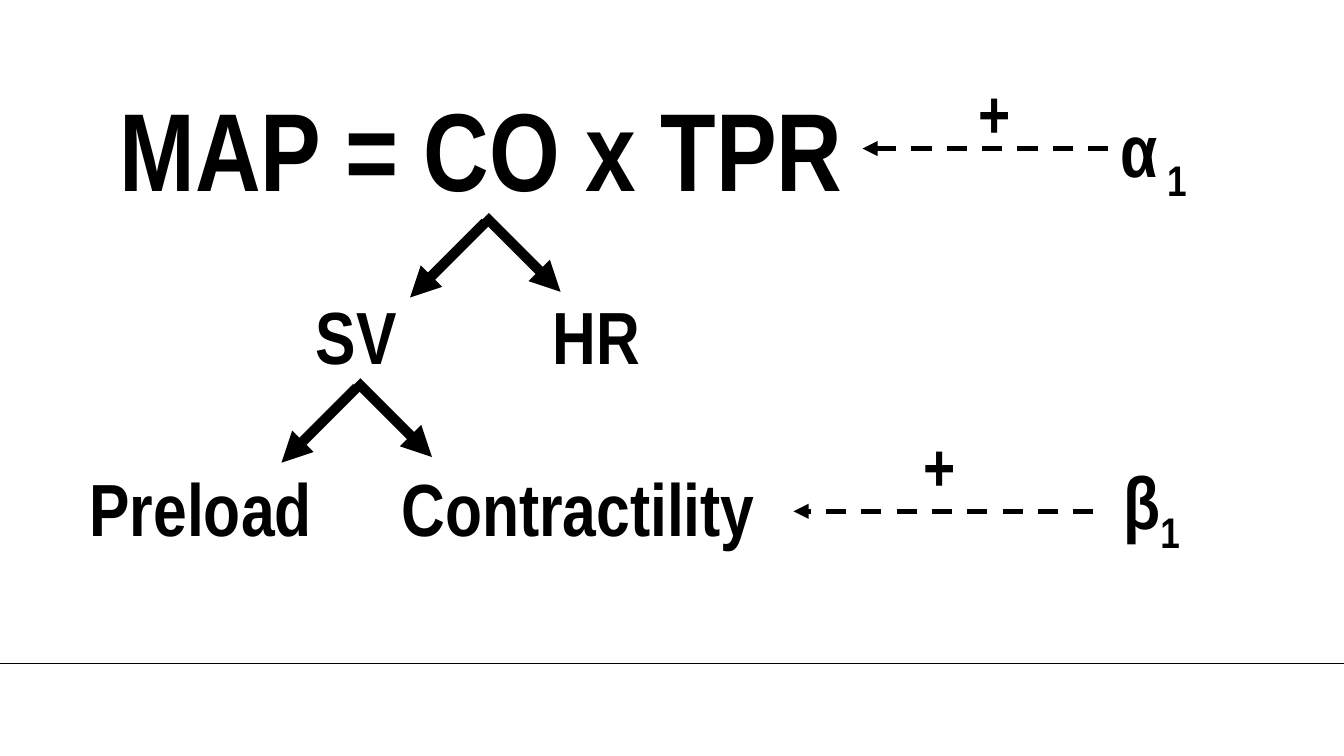
from dataclasses import dataclass

from lxml.etree import SubElement
from pptx import Presentation
from pptx.dml.color import RGBColor
from pptx.enum.dml import MSO_LINE_DASH_STYLE as Dash
from pptx.enum.shapes import MSO_CONNECTOR_TYPE as ConnectorType
from pptx.enum.text import MSO_AUTO_SIZE as AutoSize
from pptx.oxml.ns import qn
from pptx.slide import Slide
from pptx.util import Cm, Pt

PAGE_WIDTH, PAGE_HEIGHT = 28.22, 15.88
FONT = "Arial Narrow"
BLACK = "000000"
HEIGHTS = {66: 3.07, 44: 2.13, 40: 1.96}  # box height in cm for each text size
ARM = 1.58  # horizontal and vertical reach of a fork arm
APEX_LIFT = 0.12  # the right arm starts slightly above the left one


@dataclass
class Label:
    text: str
    left: float
    top: float
    width: float
    size: int = 44
    subscript: str = ""


@dataclass
class Line:
    start: tuple[float, float]
    end: tuple[float, float]
    weight: float
    arrow: bool = True
    dashed: bool = False


def color(value: str) -> RGBColor:
    return RGBColor.from_string(value)


def draw_label(page: Slide, label: Label) -> None:
    box = page.shapes.add_textbox(Cm(label.left), Cm(label.top),
                                  Cm(label.width), Cm(HEIGHTS[label.size]))
    frame = box.text_frame
    frame.text = label.text
    frame.word_wrap = False
    frame.auto_size = AutoSize.SHAPE_TO_FIT_TEXT
    para = frame.paragraphs[0]
    if label.subscript:
        span = para.add_run()
        span.text = label.subscript
        span.font._element.set("baseline", "-25000")
    for span in para.runs:
        span.font.name = FONT
        span.font.size = Pt(label.size)
        span.font.bold = True
        span.font.color.rgb = color(BLACK)


def draw_line(page: Slide, line: Line) -> None:
    connector = page.shapes.add_connector(
        ConnectorType.STRAIGHT, *map(Cm, line.start + line.end))
    connector.line.color.rgb = color(BLACK)
    connector.line.width = Pt(line.weight)
    if line.dashed:
        connector.line.dash_style = Dash.DASH
    if line.arrow:
        SubElement(connector.line._get_or_add_ln(), qn("a:tailEnd"), type="triangle")
    SubElement(connector._element.spPr, qn("a:effectLst"))


def fork(x: float, y: float) -> list[Line]:
    """Two arrows that spread downwards from one apex."""
    lifted = y - APEX_LIFT
    return [Line((x, y), (x - ARM, y + ARM), 6),
            Line((x, lifted), (x + ARM, lifted + ARM), 6)]


LABELS = [
    # Equation and its factors
    Label("MAP = CO x TPR", 2.26, 1.57, 15.85, size=66),
    Label("SV", 6.38, 5.99, 2.24),
    Label("HR", 11.35, 5.99, 2.36),
    Label("Preload", 1.63, 9.6, 5.23),
    Label("Contractility", 8.18, 9.6, 8),
    # Receptors and their effect
    Label("α", 23.27, 2.06, 2.01, subscript=" 1"),
    Label("β", 23.34, 9.45, 1.78, subscript="1"),
    Label("+", 20.29, 1.37, 1.22, size=40),
    Label("+", 19.15, 8.79, 1.22, size=40),
]

LINES = [
    Line((0, 13.94), (PAGE_WIDTH, 13.94), 0.75, arrow=False),  # footer rule
    *fork(10.19, 4.67),
    *fork(7.49, 8.14),
    Line((23.27, 3.12), (18.11, 3.12), 3, dashed=True),
    Line((22.96, 10.74), (16.66, 10.74), 3, dashed=True),
]


def main() -> None:
    deck = Presentation()
    deck.slide_width, deck.slide_height = Cm(PAGE_WIDTH), Cm(PAGE_HEIGHT)
    page = deck.slides.add_slide(deck.slide_layouts[6])
    for line in LINES:
        draw_line(page, line)
    for label in LABELS:
        draw_label(page, label)
    deck.save("out.pptx")


if __name__ == "__main__":
    main()
